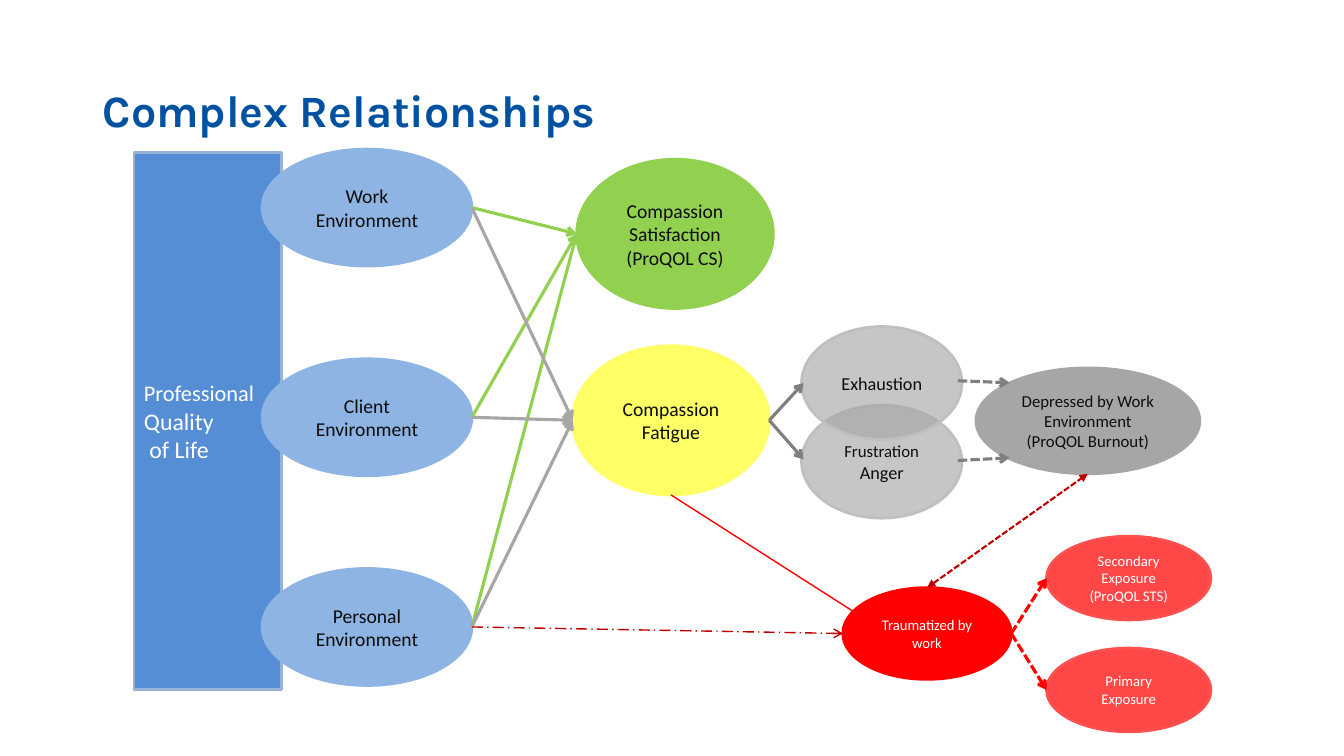
from pptx import Presentation
from pptx.dml.color import RGBColor
from pptx.enum.dml import MSO_LINE_DASH_STYLE as DASH
from pptx.enum.shapes import MSO_CONNECTOR, MSO_SHAPE
from pptx.enum.text import MSO_ANCHOR, PP_ALIGN
from pptx.oxml.ns import qn
from pptx.util import Inches, Pt
from lxml.etree import SubElement

COLORS = {
    "title": "00519F", "panel": "558ED5", "panel_line": "95B3D7",
    "environment": "8EB4E3", "satisfaction": "92D050", "fatigue": "FFFF66",
    "gray": "A6A6A6", "light_gray": "BFBFBF", "dark_gray": "7F7F7F",
    "red": "FF0000", "soft_red": "FF5050", "dark_red": "C00000",
    "dark": "0D0D0D", "white": "FFFFFF",
}
BODY_FONT = "Calibri"


def rgb(name):
    return RGBColor.from_string(COLORS[name])


def add_run(paragraph, text, size, color, font=BODY_FONT, bold=False):
    run = paragraph.add_run()
    run.text = text
    run.font.name = font
    run.font.size = Pt(size)
    run.font.bold = bold
    run.font.color.rgb = rgb(color)


def add_block(slide, kind, box, fill, line, alpha=None):
    shape = slide.shapes.add_shape(kind, *map(Inches, box))
    shape.shadow.inherit = False
    shape.fill.solid()
    shape.fill.fore_color.rgb = rgb(fill)
    if alpha:
        color = shape.fill._xPr.find(".//" + qn("a:srgbClr"))
        SubElement(color, qn("a:alpha"), val=str(alpha * 1000))
    shape.line.color.rgb = rgb(line)
    shape.line.width = Pt(2)
    shape.text_frame.word_wrap = True
    shape.text_frame.vertical_anchor = MSO_ANCHOR.MIDDLE
    return shape


def add_oval(slide, box, paragraphs, fill, line=None, color="dark", alpha=None):
    shape = add_block(slide, MSO_SHAPE.OVAL, box, fill, line or fill, alpha)
    frame = shape.text_frame
    for index, runs in enumerate(paragraphs):
        paragraph = frame.add_paragraph() if index else frame.paragraphs[0]
        paragraph.alignment = PP_ALIGN.CENTER
        for text, size in runs:
            add_run(paragraph, text, size, color)
    return shape


def anchor(shape, across, down):
    return (shape.left + int(shape.width * across),
            shape.top + int(shape.height * down))


def left_of(shape):
    return anchor(shape, 0, 0.5)


def right_of(shape):
    return anchor(shape, 1, 0.5)


def add_arrow(slide, start, end, color, width=2.25, dash=None, head=None, tail="arrow"):
    connector = slide.shapes.add_connector(MSO_CONNECTOR.STRAIGHT, *start, *end)
    connector.line.color.rgb = rgb(color)
    connector.line.width = Pt(width)
    if dash:
        connector.line.dash_style = dash
    line = connector.line._get_or_add_ln()
    if head:
        SubElement(line, qn("a:headEnd"), type=head)
    SubElement(line, qn("a:tailEnd"), type=tail)
    SubElement(connector._element.spPr, qn("a:effectLst"))


def draw_title(slide, box):
    frame = slide.shapes.add_textbox(*map(Inches, box)).text_frame
    frame.word_wrap = True
    frame.vertical_anchor = MSO_ANCHOR.MIDDLE
    paragraph = frame.paragraphs[0]
    paragraph.line_spacing = 0.9
    add_run(paragraph, "Complex Relationships", 32, "title", "Karla", True)


def draw_environments(slide, box):
    left, top, width, height = box
    panel = add_block(slide, MSO_SHAPE.RECTANGLE, box, "panel", "panel_line")
    paragraph = panel.text_frame.paragraphs[0]
    paragraph.alignment = PP_ALIGN.LEFT
    add_run(paragraph, "Professional", 16, "white")
    add_run(paragraph, " Quality", 17, "white")
    paragraph.add_line_break()
    add_run(paragraph, " of Life", 17, "white")
    names = ("Work", "Client", "Personal")
    return [
        add_oval(slide, (left + 1.27, top - 0.03 + 2.08 * index, 2.08, 1.16),
                 [[(f"{name} Environment", 14)]], "environment")
        for index, name in enumerate(names)
    ]


def draw_outcomes(slide, box):
    left, top, width, height = box
    fatigue = add_oval(slide, (left, top + height - 1.48, 1.95, 1.48),
                       [[("Compassion Fatigue", 14)]], "fatigue")
    satisfaction = add_oval(slide, (left + width - 1.95, top, 1.95, 1.48),
                            [[("Compassion Satisfaction (ProQOL CS)", 14)]],
                            "satisfaction")
    return satisfaction, fatigue


def draw_burnout(slide, box):
    left, top, width, height = box
    feelings = [
        add_oval(slide, (left, top + offset, 1.59, 1.12), [runs],
                 "gray", "light_gray", alpha=63)
        for offset, runs in ((height - 1.12, [("Frustration ", 12), ("Anger", 13)]),
                             (0, [("Exhaustion", 13)]))
    ]
    depressed = add_oval(slide, (left + width - 2.22, top + 0.41, 2.22, 1.05),
                         [[("Depressed by Work Environment", 12)],
                          [("(ProQOL Burnout)", 12)]], "gray")
    for feeling, level, target in zip(feelings, (0.49, 0.48), (0.85, 0.14)):
        add_arrow(slide, anchor(feeling, 0.975, level),
                  anchor(depressed, 0.15, target), "dark_gray", dash=DASH.SQUARE_DOT)
    return feelings, depressed


def draw_trauma(slide, box):
    left, top, width, height = box
    trauma = add_oval(slide, (left, top + 0.51, 1.67, 0.91),
                      [[("Traumatized by work", 10.5)]], "red", color="white")
    names = ("Secondary Exposure (ProQOL STS)", "Primary Exposure")
    for index, name in enumerate(names):
        oval_top = top + index * (height - 0.83)
        exposure = add_oval(slide, (left + width - 1.63, oval_top, 1.63, 0.83),
                            [[(name, 10.5)]], "red", "soft_red", "white", 72)
        add_arrow(slide, right_of(trauma), left_of(exposure), "red",
                  dash=DASH.SQUARE_DOT)
    return trauma


def draw_links(slide, environments, outcomes, feelings, depressed, trauma):
    satisfaction, fatigue = outcomes
    for outcome, color in ((satisfaction, "satisfaction"), (fatigue, "gray")):
        for environment in environments:
            add_arrow(slide, right_of(environment), left_of(outcome), color)
    for feeling, level in zip(feelings, (0.48, 0.5)):
        add_arrow(slide, right_of(fatigue), anchor(feeling, 0.013, level), "dark_gray")
    add_arrow(slide, right_of(environments[-1]), left_of(trauma), "dark_red", 1,
              DASH.LONG_DASH_DOT)
    add_arrow(slide, anchor(fatigue, 0.5, 1), anchor(trauma, 0.25, 0.48), "red", 1)
    add_arrow(slide, anchor(trauma, 0.5, 0), anchor(depressed, 0.5, 1), "dark_red",
              1.5, DASH.SQUARE_DOT, "triangle", "triangle")


def main():
    presentation = Presentation()
    presentation.slide_width = Inches(13.33)
    presentation.slide_height = Inches(7.5)
    slide = presentation.slides.add_slide(presentation.slide_layouts[6])
    draw_title(slide, (0.92, 0.4, 11.5, 1.45))
    environments = draw_environments(slide, (1.33, 1.51, 1.46, 5.33))
    outcomes = draw_outcomes(slide, (5.68, 1.58, 1.99, 3.33))
    trauma = draw_trauma(slide, (8.36, 5.32, 3.65, 1.94))
    feelings, depressed = draw_burnout(slide, (7.95, 3.24, 3.95, 1.9))
    draw_links(slide, environments, outcomes, feelings, depressed, trauma)
    presentation.save("out.pptx")


if __name__ == "__main__":
    main()
